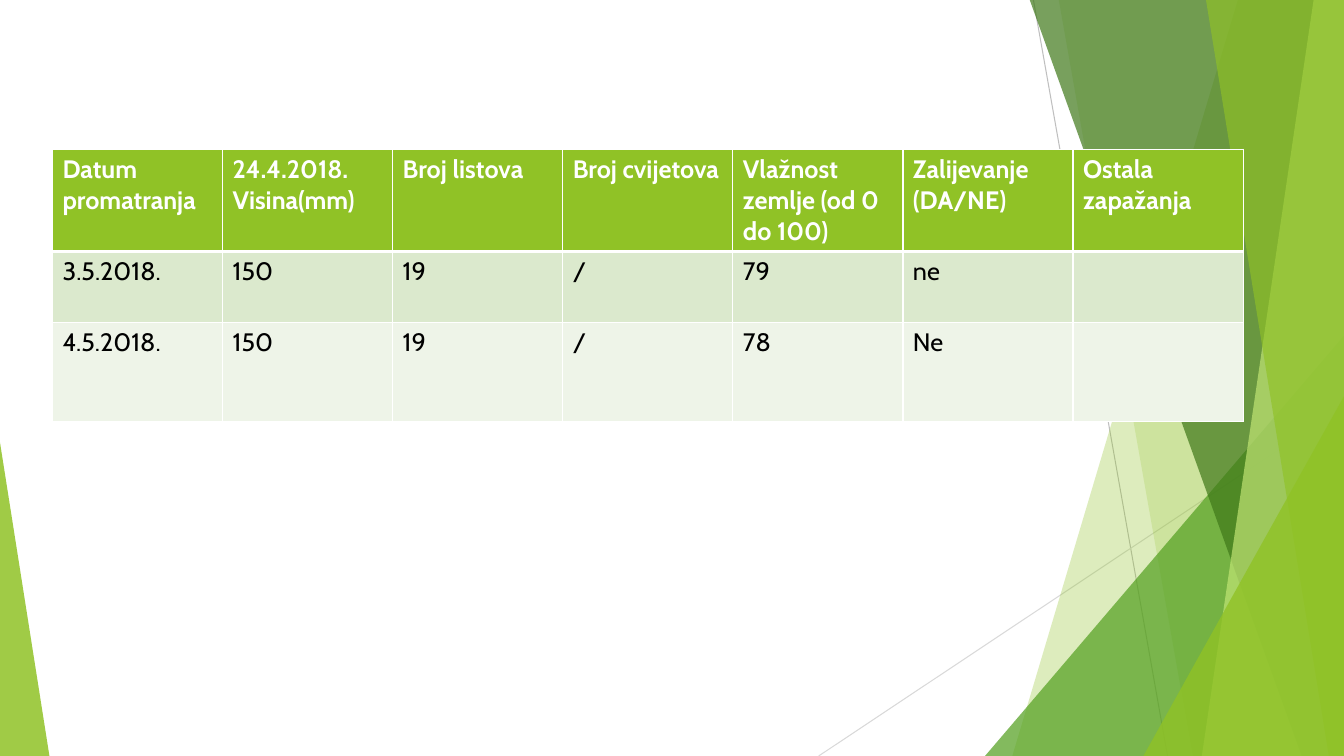
from dataclasses import dataclass

import pptx
import pptx.dml.color
import pptx.enum.shapes
import pptx.oxml
import pptx.oxml.ns
import pptx.util

Inches = pptx.util.Inches


@dataclass(frozen=True)
class Theme:
    """Colours, font and sizes of the slide."""
    green: str = "90C226"
    leaf: str = "54A021"
    forest: str = "3F7819"
    lime: str = "C0E474"
    white: str = "FFFFFF"
    black: str = "000000"
    bands: tuple = ("DBE9CD", "EEF4E8")
    steep_ray: str = "BFBFBF"
    flat_ray: str = "D9D9D9"
    font: str = "Cabin"
    text_size: float = 18
    ray_width: float = 0.75
    grid_width: float = 1
    header_rule: float = 3


THEME = Theme()

HEADERS = [
    "Datum promatranja", "24.4.2018.\nVisina(mm)", "Broj listova", "Broj cvijetova",
    "Vlažnost zemlje (od 0 do 100)", "Zalijevanje (DA/NE)", "Ostala zapažanja",
]
OBSERVATIONS = [
    ["3.5.2018.", "150", "19", "/", "79", "ne", ""],
    ["4.5.2018.", "150", "19", "/", "78", "Ne", ""],
]
ROW_HEIGHTS = [0.8, 0.7, 0.99]


def rgb(colour):
    """Turn a hex string into a colour."""
    return pptx.dml.color.RGBColor.from_string(colour)


def paint(shape, colour, opacity):
    """Give a shape a translucent fill without outline or shadow."""
    shape.shadow.inherit = False
    shape.line.fill.background()
    shape.fill.solid()
    shape.fill.fore_color.rgb = rgb(colour)
    tint = shape.fill._xPr.find(".//" + pptx.oxml.ns.qn("a:srgbClr"))
    alpha = pptx.oxml.parse_xml(f'<a:alpha {pptx.oxml.ns.nsdecls("a")} val="{opacity * 1000}"/>')
    tint.append(alpha)


def add_ray(slide, start, end, colour):
    """Draw a thin straight line."""
    ray = slide.shapes.add_connector(
        pptx.enum.shapes.MSO_CONNECTOR.STRAIGHT, *map(Inches, start + end))
    ray.line.color.rgb = rgb(colour)
    ray.line.width = pptx.util.Pt(THEME.ray_width)
    ray._element.spPr.append(
        pptx.oxml.parse_xml(f'<a:effectLst {pptx.oxml.ns.nsdecls("a")}/>'))


def add_facet(slide, box, top_inset, bottom_inset, colour, opacity):
    """Fill the area between a slanted edge and the right side of the box."""
    left, top, width, height = box
    right, bottom = left + width, top + height
    corners = [(right - top_inset, top), (right, top),
               (right, bottom), (right - bottom_inset, bottom)]
    start, *others = [(Inches(x), Inches(y)) for x, y in corners]
    outline = slide.shapes.build_freeform(*start)
    outline.add_line_segments(others, close=True)
    paint(outline.convert_to_shape(), colour, opacity)


def add_wedge(slide, box, apex, colour, opacity):
    """Draw a triangle whose apex lies at a fraction of its width."""
    wedge = slide.shapes.add_shape(
        pptx.enum.shapes.MSO_SHAPE.ISOSCELES_TRIANGLE, *map(Inches, box))
    wedge.adjustments[0] = apex
    paint(wedge, colour, opacity)


def add_corner_wedge(slide, box, width, height, colour, opacity):
    """Place a wedge in the lower right corner of the box."""
    right, bottom = box[0] + box[2], box[1] + box[3]
    add_wedge(slide, (right - width, bottom - height, width, height), 1, colour, opacity)


def add_right_facets(slide, box):
    """Build the layered decoration on the right."""
    left, top, width, height = box
    right, bottom = left + width, top + height
    add_ray(slide, (right - 3.08, 0), (right - 1.75, bottom), THEME.steep_ray)
    add_ray(slide, (right, bottom - 3.47), (left, bottom), THEME.flat_ray)
    layers = [
        (add_facet, 1.05, 3.29, THEME.green, 30),
        (add_facet, 2.83, 1.5, THEME.green, 20),
        (add_corner_wedge, 3.56, 4.17, THEME.leaf, 72),
        (add_facet, 3.12, 0.42, THEME.forest, 70),
        (add_facet, 0.3, 1.41, THEME.lime, 70),
        (add_facet, 1.37, 0.15, THEME.green, 65),
        (add_corner_wedge, 1.99, 3.57, THEME.green, 80),
    ]
    for draw, *settings in layers:
        draw(slide, box, *settings)


def style_cell(cell, text, fill, colour, bold, top_rule, bottom_rule):
    """Set text, borders and fill of one table cell."""
    rules = {"L": THEME.grid_width, "R": THEME.grid_width, "T": top_rule, "B": bottom_rule}
    properties = cell._tc.get_or_add_tcPr()
    for side, width in rules.items():
        properties.append(pptx.oxml.parse_xml(
            f'<a:ln{side} {pptx.oxml.ns.nsdecls("a")} w="{pptx.util.Pt(width)}"><a:solidFill>'
            f'<a:srgbClr val="{THEME.white}"/></a:solidFill></a:ln{side}>'))
    cell.fill.solid()
    cell.fill.fore_color.rgb = rgb(fill)
    for index, line in enumerate(text.splitlines()):
        frame = cell.text_frame
        paragraph = frame.add_paragraph() if index else frame.paragraphs[0]
        run = paragraph.add_run()
        run.text = line
        run.font.name = THEME.font
        run.font.size = pptx.util.Pt(THEME.text_size)
        run.font.bold = bold
        run.font.color.rgb = rgb(colour)


def add_observations(slide, box):
    """Build the plant observation table."""
    rows = [HEADERS] + OBSERVATIONS
    table = slide.shapes.add_table(len(rows), len(HEADERS), *map(Inches, box)).table
    for column in table.columns:
        column.width = Inches(box[2] / len(HEADERS))
    fills = [THEME.green, *THEME.bands]
    for index, (texts, height, fill) in enumerate(zip(rows, ROW_HEIGHTS, fills)):
        table.rows[index].height = Inches(height)
        header = index == 0
        colour = THEME.white if header else THEME.black
        top_rule = THEME.header_rule if index == 1 else THEME.grid_width
        bottom_rule = THEME.header_rule if header else THEME.grid_width
        for column, text in enumerate(texts):
            style_cell(table.cell(index, column), text, fill, colour, header,
                       top_rule, bottom_rule)


def main():
    """Create the slide and save it."""
    deck = pptx.Presentation()
    deck.slide_width, deck.slide_height = Inches(13.33), Inches(7.5)
    slide = deck.slides.add_slide(deck.slide_layouts[6])
    add_right_facets(slide, (8.12, -0.01, 5.21, 7.51))
    add_wedge(slide, (0, 4.39, 0.49, 3.11), 0, THEME.green, 85)
    add_observations(slide, (0.52, 1.48, 11.81, sum(ROW_HEIGHTS)))
    deck.save("out.pptx")


if __name__ == "__main__":
    main()
